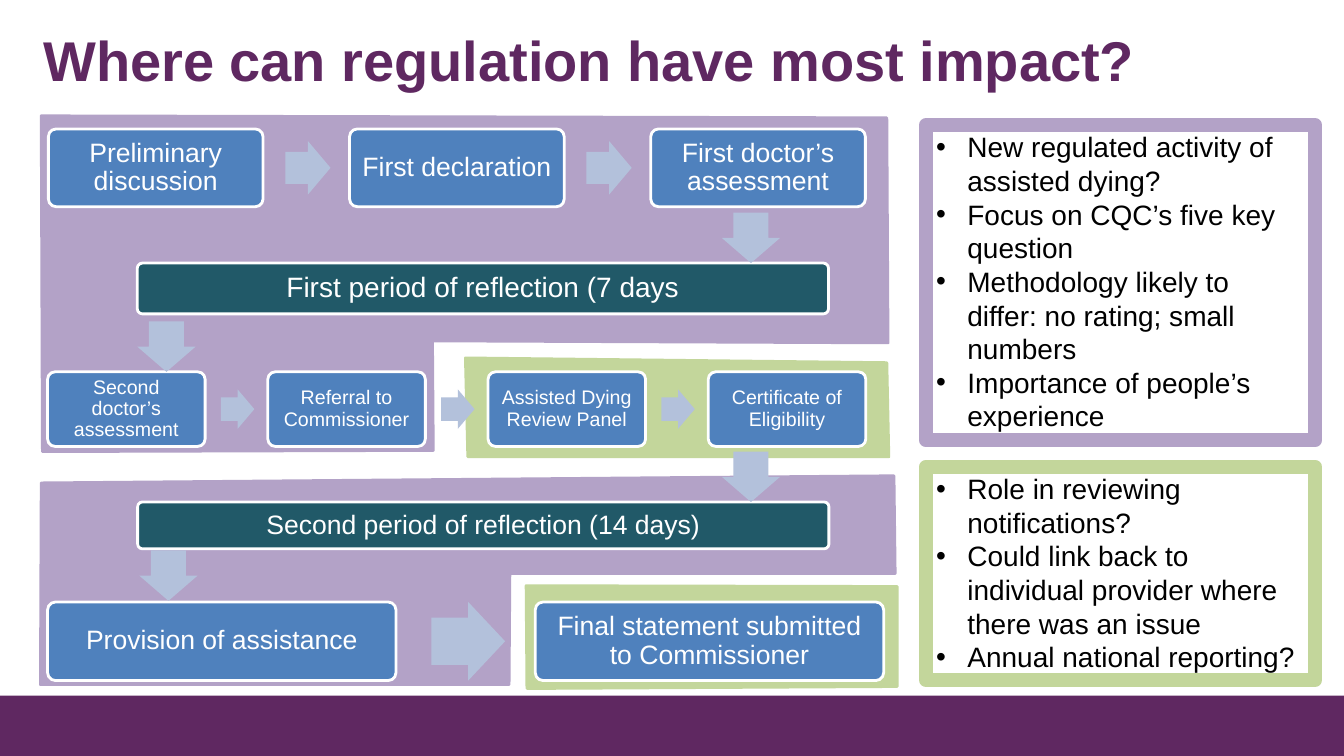
from lxml import etree
from pptx import Presentation, util as u
from pptx.dml.color import RGBColor
from pptx.enum import shapes, text
from pptx.oxml import ns

PLUM = RGBColor(0x5F, 0x28, 0x61)
LILAC = RGBColor(0xB3, 0xA2, 0xC7)
GREEN = RGBColor(0xC3, 0xD6, 0x9B)
BLUE = RGBColor(0x4F, 0x81, 0xBD)
TEAL = RGBColor(0x21, 0x59, 0x68)
PALE_BLUE = RGBColor(0xB3, 0xC1, 0xDB)
WHITE = RGBColor(0xFF, 0xFF, 0xFF)
BLACK = RGBColor(0x00, 0x00, 0x00)
KINDS = shapes.MSO_SHAPE

presentation = Presentation()
presentation.slide_width = u.Cm(33.87)
presentation.slide_height = u.Cm(19.05)
slide = presentation.slides.add_slide(presentation.slide_layouts[6])


def add_block(kind, left, top, width, height, fill=None, line=None, line_width=2):
    shape = slide.shapes.add_shape(kind, u.Cm(left), u.Cm(top), u.Cm(width), u.Cm(height))
    shape.shadow.inherit = False
    if fill is None:
        shape.fill.background()
    else:
        shape.fill.solid()
        shape.fill.fore_color.rgb = fill
    if line is None:
        shape.line.fill.background()
    else:
        shape.line.color.rgb = line
        shape.line.width = u.Pt(line_width)
    if kind == KINDS.ROUNDED_RECTANGLE:
        shape.adjustments[0] = 0.1
    elif kind == KINDS.RIGHT_ARROW:
        shape.adjustments[0] = 0.6
        shape.adjustments[1] = 0.5
    return shape


def write(paragraph, words, size, color, bold=False):
    run = paragraph.add_run()
    run.text = words
    run.font.name = "Arial"
    run.font.size = u.Pt(size)
    run.font.bold = bold
    run.font.color.rgb = color


add_block(KINDS.RECTANGLE, 0, 17.53, 33.87, 1.52, PLUM)

zones = [
    (GREEN, [(13.26, 14.76), (13.28, 17.35), (22.61, 17.3), (22.61, 14.78)]),
    (GREEN, [(11.73, 9.02), (11.79, 11.51), (22.4, 11.51), (22.35, 9.14)]),
    (LILAC, [(1.04, 12.17), (1.02, 17.25), (12.83, 17.25), (12.85, 14.45),
             (22.56, 14.45), (22.53, 11.99)]),
    (LILAC, [(1.04, 2.92), (1.07, 11.38), (10.92, 11.35), (10.9, 8.59),
             (22.38, 8.64), (22.35, 2.97)]),
]
for color, corners in zones:
    points = [(u.Cm(x), u.Cm(y)) for x, y in corners]
    builder = slide.shapes.build_freeform(*points[0])
    builder.add_line_segments(points[1:], close=True)
    zone = builder.convert_to_shape()
    zone.shadow.inherit = False
    zone.fill.solid()
    zone.fill.fore_color.rgb = color
    zone.line.color.rgb = color
    zone.line.width = u.Pt(2)

title = slide.shapes.add_textbox(u.Cm(0.84), u.Cm(0.53), u.Cm(31.78), u.Cm(1.96))
title.text_frame.word_wrap = True
write(title.text_frame.paragraphs[0], "Where can regulation have most impact?", 40, PLUM, True)

step_rows = [
    (1.22, 3.25, 5.41, 1.96, 7.59, (5.97, 1.14, 1.35), 19, 0.2,
     ["Preliminary discussion", "First declaration", "First doctor’s assessment"]),
    (1.2, 15.17, 8.78, 1.98, 12.29, (9.67, 1.86, 1.98), 19, 0.2,
     ["Provision of assistance", "Final statement submitted to Commissioner"]),
    (1.2, 9.37, 3.97, 1.88, 5.55, (4.37, 0.84, 0.99), 14, 0.15,
     ["Second doctor’s assessment", "Referral to Commissioner",
      "Assisted Dying Review Panel", "Certificate of Eligibility"]),
]
boxes = []
for left, top, width, height, pitch, arrow, size, inset, steps in step_rows:
    offset, arrow_width, arrow_height = arrow
    for index, step in enumerate(steps):
        x = left + index * pitch
        boxes.append((x, top, width, height, BLUE, size, inset, step))
        if index < len(steps) - 1:
            add_block(KINDS.RIGHT_ARROW, x + offset, top + (height - arrow_height) / 2,
                      arrow_width, arrow_height, PALE_BLUE)
boxes += [
    (3.46, 6.63, 17.42, 1.28, TEAL, 20, 0.2, "First period of reflection (7 days"),
    (3.47, 12.65, 17.42, 1.18, TEAL, 19, 0.2, "Second period of reflection (14 days)"),
]
for left, top, width, height, color, size, inset, words in boxes:
    box = add_block(KINDS.ROUNDED_RECTANGLE, left, top, width, height, color, WHITE)
    frame = box.text_frame
    frame.word_wrap = True
    frame.vertical_anchor = text.MSO_ANCHOR.MIDDLE
    frame.margin_left = frame.margin_right = u.Cm(inset)
    frame.margin_top = frame.margin_bottom = u.Cm(inset)
    paragraph = frame.paragraphs[0]
    paragraph.alignment = text.PP_ALIGN.CENTER
    paragraph.line_spacing = 0.9
    write(paragraph, words, size, WHITE)

for left, top in [(18.29, 5.26), (3.56, 8), (18.29, 11.28), (3.61, 13.77)]:
    add_block(KINDS.RIGHT_ARROW, left, top, 1.27, 1.47, PALE_BLUE).rotation = 90

panels = [
    (3.15, 7.95, LILAC, [
        "New regulated activity of assisted dying?",
        "Focus on CQC’s five key question",
        "Methodology likely to differ: no rating; small numbers",
        "Importance of people’s experience"]),
    (11.76, 5.38, GREEN, [
        "Role in reviewing notifications?",
        "Could link back to individual provider where there was an issue",
        "Annual national reporting?"]),
]
for top, height, color, points in panels:
    panel = add_block(KINDS.RECTANGLE, 23.34, top, 9.8, height, None, color, 10)
    frame = panel.text_frame
    frame.word_wrap = True
    frame.vertical_anchor = text.MSO_ANCHOR.TOP
    for index, point in enumerate(points):
        paragraph = frame.add_paragraph() if index else frame.paragraphs[0]
        paragraph.alignment = text.PP_ALIGN.LEFT
        properties = paragraph._p.get_or_add_pPr()
        properties.set("marL", str(u.Cm(0.79)))
        properties.set("indent", str(-u.Cm(0.79)))
        etree.SubElement(properties, ns.qn("a:buFont")).set("typeface", "Arial")
        etree.SubElement(properties, ns.qn("a:buChar")).set("char", "•")
        write(paragraph, point, 20, BLACK)

presentation.save("out.pptx")
